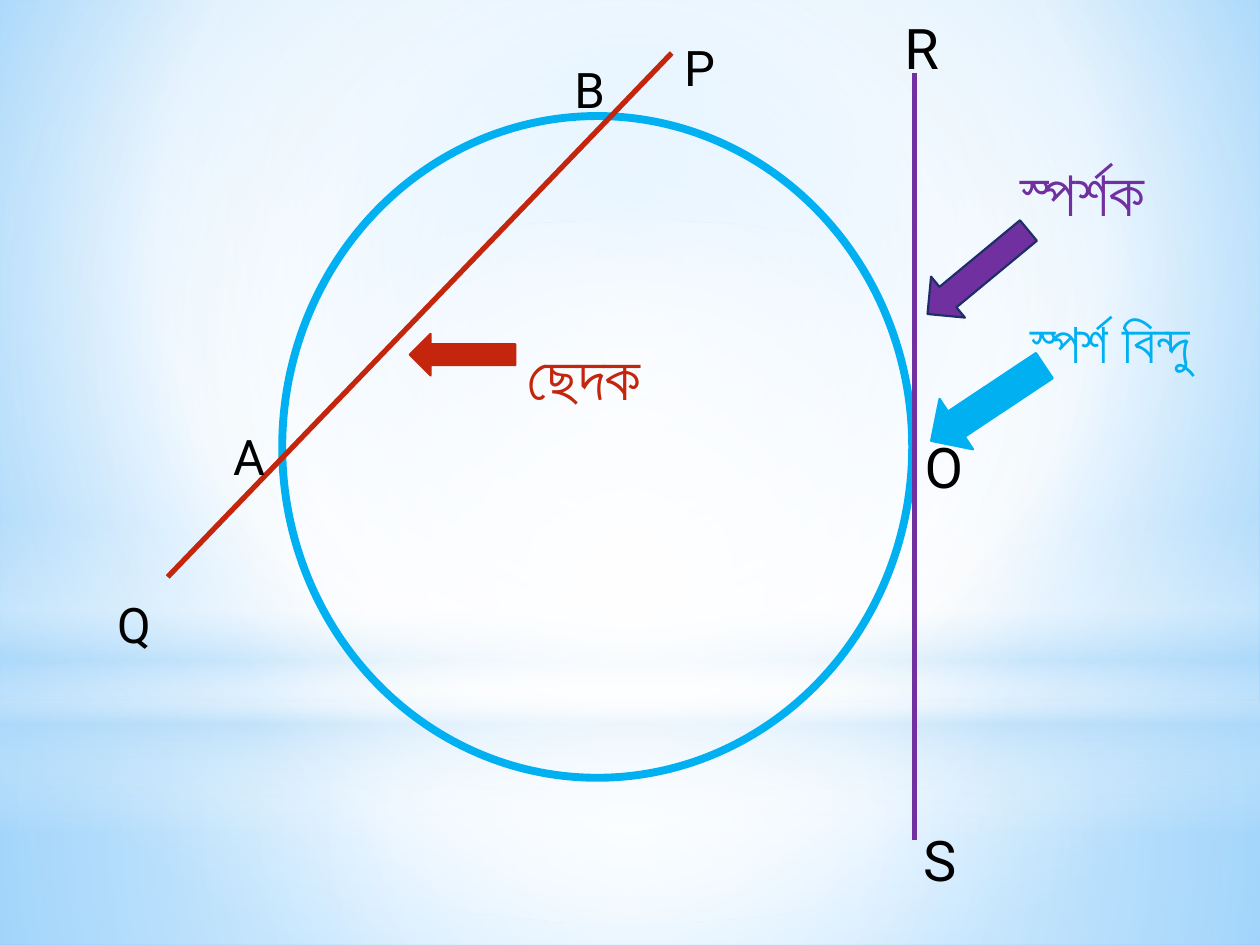
import pptx
import pptx.util
import pptx.dml.color
import pptx.enum.shapes
import pptx.enum.text
import pptx.oxml
import pptx.oxml.ns
from lxml import etree

Cm = pptx.util.Cm
Pt = pptx.util.Pt
Kind = pptx.enum.shapes.MSO_SHAPE
qn = pptx.oxml.ns.qn

WIDE, HIGH = 25.4, 19.05
BLACK, BLUE, RED, PLUM, NAVY = "000000", "00B0F0", "C3260C", "7030A0", "1F2E69"
PALE = "B4DCFA"
MID = (50, 50, 50, 50)

BACK = [(0, "9ED5FF", 100), (60, "FFFFFF", 100), (100, "5BB9FF", 100)]
BACK_RECT = (20, 10, 20, 60)

GLOWS = [
    (Kind.RECTANGLE, 14.17, 4.88, MID,
     [(0, "FFFFFF", 91), (37, "FFFFFF", 76), (100, PALE, 79)]),
    (Kind.RECTANGLE, 0, 14.17, MID,
     [(0, "FFFFFF", 89), (48, "FFFFFF", 62), (100, PALE, 79)]),
    (Kind.RECTANGLE, 10.46, 6.35, None,
     [(0, "FFFFFF", 0), (29, "FFFFFF", 30), (45, PALE, 40),
      (55, "FFFFFF", 26), (65, PALE, 60), (100, "FFFFFF", 0)]),
    (Kind.OVAL, 4.45, 14.17, MID,
     [(0, "FFFFFF", 100), (56, "FFFFFF", 0)]),
]

CIRCLE = (5.69, 2.34, 12.7, 13.34)

LINES = [
    ((13.54, 1.07), (3.38, 11.63), RED),
    ((18.44, 1.47), (18.44, 16.94), PLUM),
]

LABELS = [
    ("P", 13.54, 0.64, 2.74, 28, "Roboto", BLACK),
    ("Q", 2.11, 11.86, 2.74, 28, "Roboto", BLACK),
    ("A", 4.45, 8.48, 4.01, 28, "Roboto", BLACK),
    ("B", 11.33, 1.07, 3.61, 28, "Roboto", BLACK),
    ("R", 17.98, 0.15, 3.61, 32, "Roboto", BLACK),
    ("S", 18.36, 16.51, 3.61, 32, "Roboto", BLACK),
    ("O", 18.39, 8.59, 4.01, 32, "Roboto", BLACK),
    ("স্পর্শ বিন্দু", 20.52, 6.07, 4.88, 32, "Calibri", BLUE),
    ("স্পর্শক", 20.32, 2.97, 3.61, 36, "Calibri", PLUM),
    ("ছেদক", 10.39, 6.68, 4.45, 36, "Calibri", RED),
]
TALL = {28: 1.45, 32: 1.63, 36: 1.8}

ARROWS = [
    (Kind.DOWN_ARROW, (19.3, 6.76, 1.22, 2.74), 56.4, BLUE, BLUE),
    (Kind.DOWN_ARROW, (19.18, 4.17, 1.07, 2.64), 50.4, PLUM, NAVY),
    (Kind.LEFT_ARROW, (8.26, 6.73, 2.13, 0.84), 0, RED, RED),
]


def rgb(code):
    return pptx.dml.color.RGBColor.from_string(code)


def blend(fill, root, stops, rect):
    fill.solid()
    old = next(root.iter(qn("a:solidFill")))
    grad = etree.Element(qn("a:gradFill"), rotWithShape="1")
    group = etree.SubElement(grad, qn("a:gsLst"))
    for pos, code, alpha in stops:
        stop = etree.SubElement(group, qn("a:gs"), pos=str(pos * 1000))
        tint = etree.SubElement(stop, qn("a:srgbClr"), val=code)
        if alpha < 100:
            etree.SubElement(tint, qn("a:alpha"), val=str(alpha * 1000))
    if rect:
        way = etree.SubElement(grad, qn("a:path"), attrib={"path": "circle"})
        sides = {side: str(part * 1000) for side, part in zip("ltrb", rect)}
        etree.SubElement(way, qn("a:fillToRect"), attrib=sides)
    else:
        etree.SubElement(grad, qn("a:lin"), ang="5400000", scaled="0")
    old.getparent().replace(old, grad)


def add_form(slide, kind, box):
    form = slide.shapes.add_shape(kind, *map(Cm, box))
    form.shadow.inherit = False
    return form


def add_line(slide, start, end, code):
    line = slide.shapes.add_connector(
        pptx.enum.shapes.MSO_CONNECTOR.STRAIGHT, *map(Cm, start + end))
    line.line.color.rgb = rgb(code)
    line.line.width = Pt(3)
    etree.SubElement(line.element.spPr, qn("a:effectLst"))


def add_label(slide, text, left, top, width, size, face, code):
    box = slide.shapes.add_textbox(Cm(left), Cm(top), Cm(width), Cm(TALL[size]))
    frame = box.text_frame
    frame.word_wrap = True
    frame.auto_size = pptx.enum.text.MSO_AUTO_SIZE.SHAPE_TO_FIT_TEXT
    run = frame.paragraphs[0].add_run()
    run.text = text
    run.font.size = Pt(size)
    run.font.name = face
    run.font.color.rgb = rgb(code)


def main():
    deck = pptx.Presentation()
    deck.slide_width, deck.slide_height = Cm(WIDE), Cm(HIGH)
    slide = deck.slides.add_slide(deck.slide_layouts[6])
    blend(slide.background.fill, slide.element, BACK, BACK_RECT)

    for kind, top, height, rect, stops in GLOWS:
        glow = add_form(slide, kind, (0, top, WIDE, height))
        glow.line.fill.background()
        blend(glow.fill, glow.element.spPr, stops, rect)

    ring = add_form(slide, Kind.OVAL, CIRCLE)
    ring.fill.background()
    ring.line.color.rgb = rgb(BLUE)
    ring.line.width = Pt(4.5)

    for start, end, code in LINES:
        add_line(slide, start, end, code)
    for label in LABELS:
        add_label(slide, *label)
    for kind, box, turn, code, edge in ARROWS:
        arrow = add_form(slide, kind, box)
        arrow.rotation = turn
        arrow.fill.solid()
        arrow.fill.fore_color.rgb = rgb(code)
        arrow.line.color.rgb = rgb(edge)
        arrow.line.width = Pt(1.25)

    deck.save("out.pptx")


if __name__ == "__main__":
    main()
